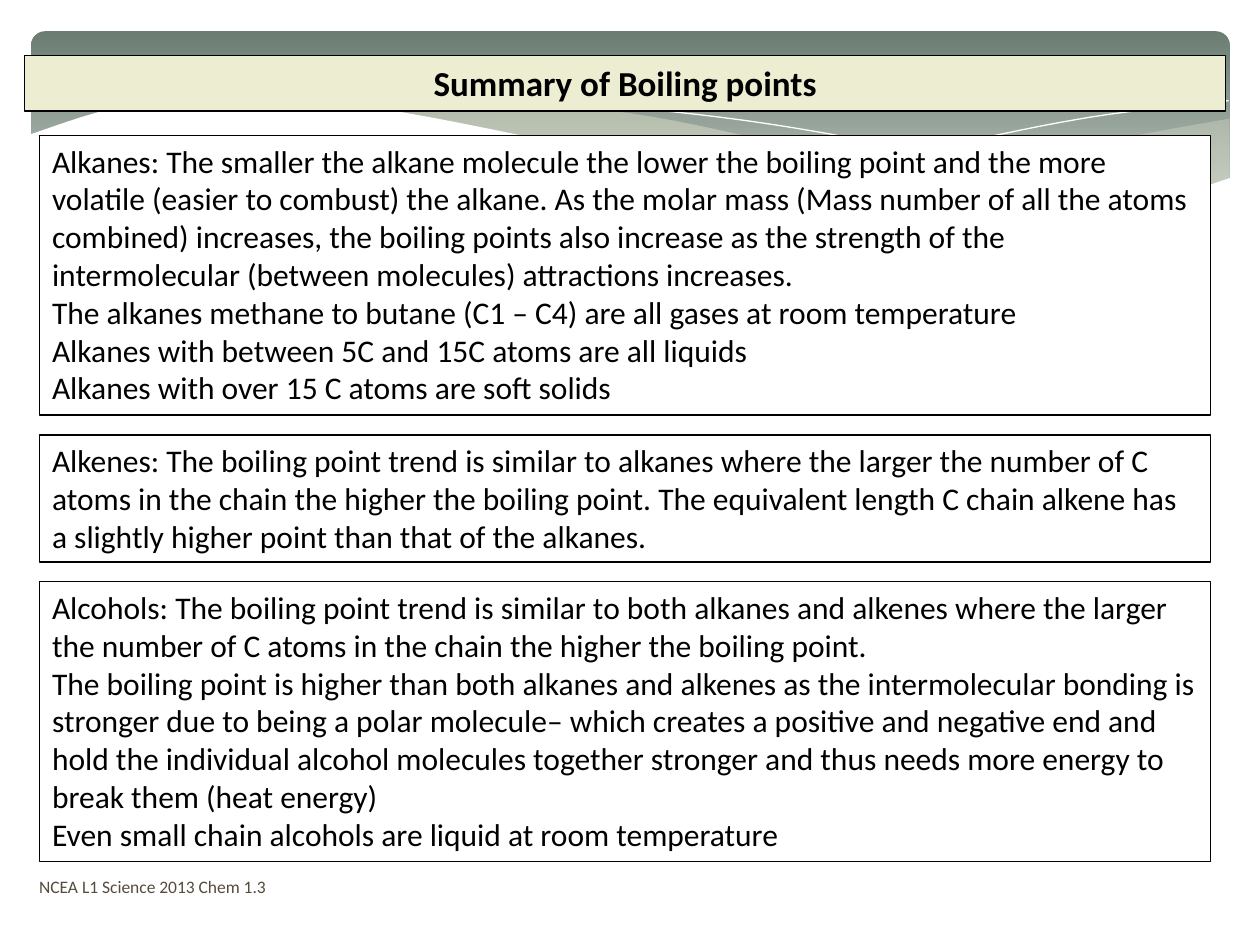
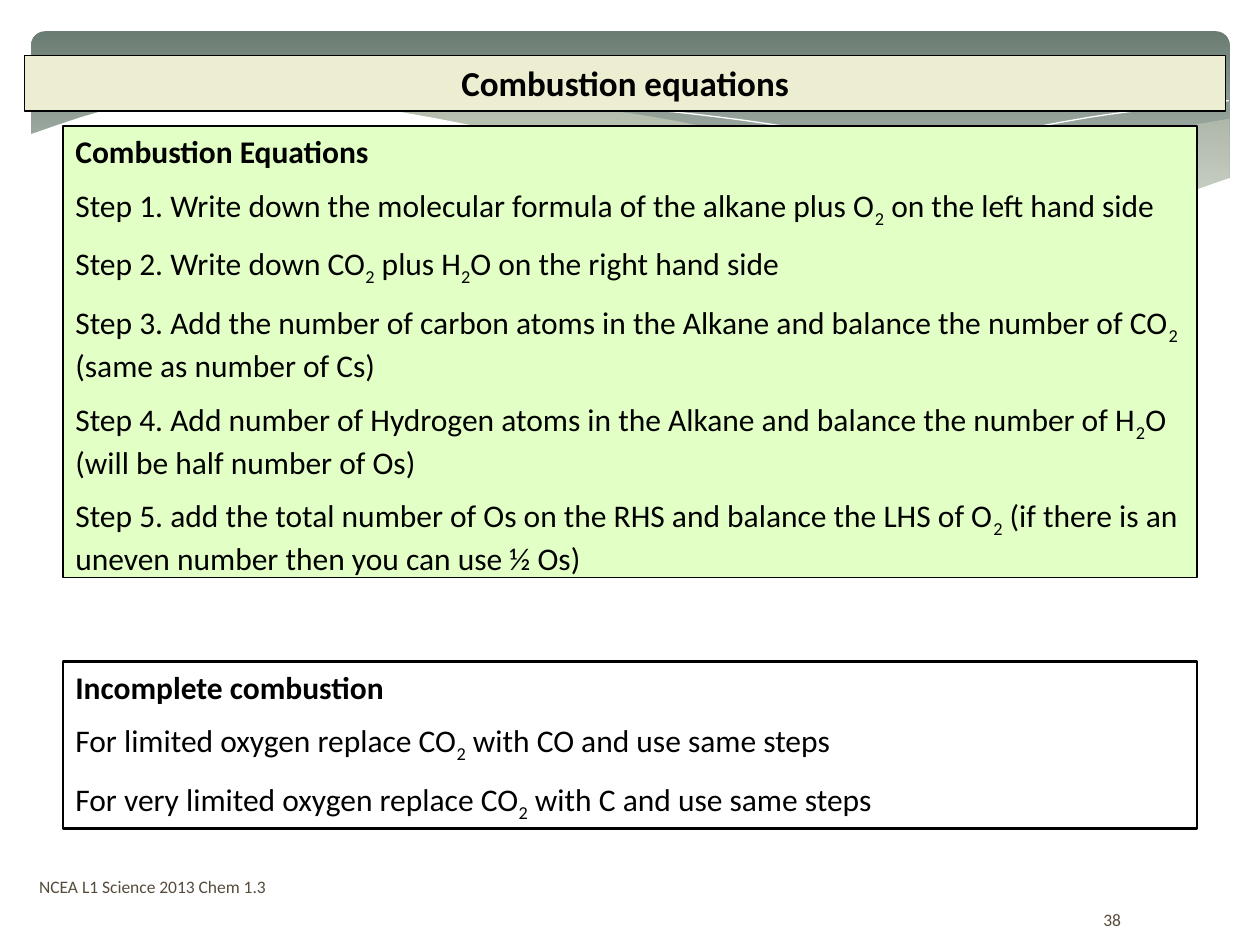
import dataclasses
import typing

import lxml.etree
import pptx
import pptx.dml.color
import pptx.enum.shapes
import pptx.enum.text
import pptx.oxml.ns
import pptx.util

Cm = pptx.util.Cm
Pt = pptx.util.Pt
RGB = pptx.dml.color.RGBColor.from_string
SHAPES = pptx.enum.shapes.MSO_SHAPE
ALIGN = pptx.enum.text.PP_ALIGN
ANCHOR = pptx.enum.text.MSO_ANCHOR
AUTO_SIZE = pptx.enum.text.MSO_AUTO_SIZE


@dataclasses.dataclass(frozen=True)
class Theme:
    font: str = "Calibri"
    ink: str = "000000"
    paper: str = "FFFFFF"
    cream: str = "ECEDD1"
    steps_green: str = "E2FFC5"
    footer_brown: str = "564B3C"
    band_dark: str = "6B7D72"
    band_light: str = "BEC7C2"
    title_size: int = 20
    body_size: int = 18
    footer_size: int = 10
    paragraph_gap: int = 9
    thin: float = 0.75
    thick: float = 1.5


class Box(typing.NamedTuple):
    left: float
    top: float
    width: float
    height: float

    def lengths(self):
        return [Cm(value) for value in self]


THEME = Theme()

SLIDE_WIDTH, SLIDE_HEIGHT = 25.4, 19.05
BAND = Box(0.63, 0.63, 24.16, 3.96)
TITLE_BAR = Box(0.5, 1.12, 24.21, 1.12)
FOOTER_AREA = Box(0.54, 17.37, 10.52, 1.02)
PAGE_NUMBER_AREA = Box(19.46, 18.03, 5.92, 1.02)
FAMILY_LEFT, FAMILY_TOP, FAMILY_WIDTH = 0.8, 2.73, 23.6
FAMILY_GAP = 0.4
BODY_LINE_HEIGHT = 0.77
PANEL_PADDING = 0.25
STEPS_MARGIN = 1.27

FOOTER = "NCEA L1 Science 2013 Chem 1.3"

ALKANES = [
    "Alkanes: The smaller the alkane molecule the lower the boiling point and the more "
    "volatile (easier to combust) the alkane. As the molar mass (Mass number of all the atoms "
    "combined) increases, the boiling points also increase as the strength of the "
    "intermolecular (between molecules) attractions increases.",
    "The alkanes methane to butane (C1 – C4) are all gases at room temperature",
    "Alkanes with between 5C and 15C atoms are all liquids",
    "Alkanes with over 15 C atoms are soft solids",
]
ALKENES = [
    "Alkenes: The boiling point trend is similar to alkanes where the larger the number of C "
    "atoms in the chain the higher the boiling point. The equivalent length C chain alkene has "
    "a slightly higher point than that of the alkanes.",
]
ALCOHOLS = [
    "Alcohols: The boiling point trend is similar to both alkanes and alkenes where the larger "
    "the number of C atoms in the chain the higher the boiling point.",
    "The boiling point is higher than both alkanes and alkenes as the intermolecular bonding is "
    "stronger due to being a polar molecule– which creates a positive and negative end and "
    "hold the individual alcohol molecules together stronger and thus needs more energy to "
    "break them (heat energy)",
    "Even small chain alcohols are liquid at room temperature",
]
COMBUSTION_STEPS = [
    "Step 1. Write down the molecular formula of the alkane plus O_2 on the left hand side",
    "Step 2. Write down CO_2 plus H_2O on the right hand side",
    "Step 3. Add the number of carbon atoms in the Alkane and balance the number of CO_2 "
    "(same as number of Cs)",
    "Step 4. Add number of Hydrogen atoms in the Alkane and balance the number of H_2O "
    "(will be half number of Os)",
    "Step 5. add the total number of Os on the RHS and balance the LHS of O_2 "
    "(if there is an uneven number then you can use ½ Os)",
]
INCOMPLETE_STEPS = [
    "For limited oxygen replace CO_2 with CO and use same steps",
    "For very limited oxygen replace CO_2 with C and use same steps",
]


def smooth(*knots, steps=8):
    padded = [knots[0], *knots, knots[-1]]
    curve = [knots[0]]
    for before, start, end, after in zip(padded, padded[1:], padded[2:], padded[3:]):
        for step in range(1, steps + 1):
            t = step / steps
            curve.append(tuple(
                b + (c - a) * t / 2
                + (2 * a - 5 * b + 4 * c - d) * t ** 2 / 2
                + (3 * b - a - 3 * c + d) * t ** 3 / 2
                for a, b, c, d in zip(before, start, end, after)))
    return curve


def add_run(paragraph, text, size, color, bold=False, subscript=False):
    run = paragraph.add_run()
    run.text = text
    run.font.name = THEME.font
    run.font.size = Pt(size)
    run.font.bold = bold
    run.font.color.rgb = RGB(color)
    if subscript:
        run._r.get_or_add_rPr().set("baseline", "-25000")


def add_formula_text(paragraph, text, size, bold=False):
    plain, *marked = text.split("_")
    add_run(paragraph, plain, size, THEME.ink, bold)
    for part in marked:
        add_run(paragraph, part[0], size, THEME.ink, bold, subscript=True)
        if part[1:]:
            add_run(paragraph, part[1:], size, THEME.ink, bold)


def add_panel(slide, box, paragraphs, fill, heading=None, size=THEME.body_size,
              align=ALIGN.LEFT, gap=0, border=THEME.thin):
    panel = slide.shapes.add_shape(SHAPES.RECTANGLE, *box.lengths())
    panel.shadow.inherit = False
    panel.fill.solid()
    panel.fill.fore_color.rgb = RGB(fill)
    panel.line.color.rgb = RGB(THEME.ink)
    panel.line.width = Pt(border)
    frame = panel.text_frame
    frame.word_wrap = True
    frame.auto_size = AUTO_SIZE.SHAPE_TO_FIT_TEXT
    frame.vertical_anchor = ANCHOR.TOP
    lines = [(heading, True)] if heading else []
    lines += [(text, False) for text in paragraphs]
    for index, (text, bold) in enumerate(lines):
        paragraph = frame.add_paragraph() if index else frame.paragraphs[0]
        paragraph.alignment = align
        if index and gap:
            paragraph.space_before = Pt(gap)
        add_formula_text(paragraph, text, size, bold)


def add_small_print(slide, box, text, align=ALIGN.LEFT):
    frame = slide.shapes.add_textbox(*box.lengths()).text_frame
    frame.word_wrap = True
    frame.vertical_anchor = ANCHOR.MIDDLE
    frame.paragraphs[0].alignment = align
    add_run(frame.paragraphs[0], text, THEME.footer_size, THEME.footer_brown)


def draw_outline(slide, points, closed):
    start, *rest = [(Cm(x), Cm(y)) for x, y in points]
    builder = slide.shapes.build_freeform(*start, scale=1.0)
    builder.add_line_segments(rest, close=closed)
    outline = builder.convert_to_shape()
    outline.shadow.inherit = False
    return outline


def add_wave(slide, points, color, opacity=100):
    wave = draw_outline(slide, points, closed=True)
    wave.line.fill.background()
    wave.fill.solid()
    wave.fill.fore_color.rgb = RGB(color)
    if opacity < 100:
        tint = wave._element.spPr.find(".//" + pptx.oxml.ns.qn("a:srgbClr"))
        alpha = lxml.etree.SubElement(tint, pptx.oxml.ns.qn("a:alpha"))
        alpha.set("val", str(opacity * 1000))


def add_hairline(slide, points):
    hairline = draw_outline(slide, points, closed=False)
    hairline.fill.background()
    hairline.line.color.rgb = RGB(THEME.paper)
    hairline.line.width = Pt(0)


def add_gradient_band(slide):
    band = slide.shapes.add_shape(SHAPES.ROUNDED_RECTANGLE, *BAND.lengths())
    band.adjustments[0] = 0.07
    band.shadow.inherit = False
    band.line.fill.background()
    band.fill.gradient()
    band.fill.gradient_angle = 270
    stops = zip(band.fill.gradient_stops, (THEME.band_dark, THEME.band_light), (0, 0.9))
    for stop, color, position in stops:
        stop.color.rgb = RGB(color)
        stop.position = position


def add_waves(slide):
    right_crest = smooth((24.79, 2.39), (22.63, 2.79), (20.45, 3.33), (16.79, 4.06))
    right_trough = smooth((16.79, 4.06), (18.92, 4.29), (20.68, 4.37), (22.78, 4.2),
                          (24.79, 3.58))
    add_wave(slide, right_crest + right_trough, THEME.cream, 29)

    middle_crest = smooth((22.68, 4.24), (19.69, 3.78), (15.98, 2.95), (12.75, 2.29),
                          (9.65, 2.03), (7.26, 2.18))
    middle_trough = smooth((7.26, 2.18), (11.4, 2.95), (14.83, 3.71), (18.34, 4.27),
                           (20.62, 4.39), (22.68, 4.24))
    add_wave(slide, middle_crest + middle_trough, THEME.cream, 40)

    add_hairline(slide, smooth((7.85, 2.29), (9.5, 2.09), (11.91, 2.11), (15.44, 2.49),
                               (19, 3.17), (23.04, 4.22)))
    add_hairline(slide, smooth((15.57, 3.84), (19, 2.97), (22, 2.36), (24.77, 2.03)))

    page_left, page_right, page_bottom = 0.58, 24.82, 5.69
    page_edge = smooth((page_right, 3.58), (22.83, 4.17), (20.14, 4.34), (16.46, 3.96),
                       (11.35, 2.9), (7.42, 2.16), (4.5, 1.98), (2.41, 2.16),
                       (page_left, 2.72))
    page_corners = [(page_left, page_bottom), (page_right, page_bottom)]
    add_wave(slide, page_edge + page_corners, THEME.paper)


def start_slide(deck, title):
    slide = deck.slides.add_slide(deck.slide_layouts[6])
    add_gradient_band(slide)
    add_waves(slide)
    add_small_print(slide, FOOTER_AREA, FOOTER)
    add_panel(slide, TITLE_BAR, [], THEME.cream, heading=title,
              size=THEME.title_size, align=ALIGN.CENTER)
    return slide


def build_boiling_points(deck):
    slide = start_slide(deck, "Summary of Boiling points")
    top = FAMILY_TOP
    for facts, line_count in [(ALKANES, 7), (ALKENES, 3), (ALCOHOLS, 7)]:
        height = line_count * BODY_LINE_HEIGHT + PANEL_PADDING
        add_panel(slide, Box(FAMILY_LEFT, top, FAMILY_WIDTH, height), facts, THEME.paper)
        top += height + FAMILY_GAP


def build_combustion(deck):
    slide = start_slide(deck, "Combustion equations")
    add_small_print(slide, PAGE_NUMBER_AREA, "38", ALIGN.CENTER)
    width = SLIDE_WIDTH - 2 * STEPS_MARGIN
    add_panel(slide, Box(STEPS_MARGIN, 2.54, width, 9.1), COMBUSTION_STEPS,
              THEME.steps_green, heading="Combustion Equations", gap=THEME.paragraph_gap)
    add_panel(slide, Box(STEPS_MARGIN, 13.34, width, 3.36), INCOMPLETE_STEPS,
              THEME.paper, heading="Incomplete combustion", gap=THEME.paragraph_gap,
              border=THEME.thick)


def main():
    deck = pptx.Presentation()
    deck.slide_width, deck.slide_height = Cm(SLIDE_WIDTH), Cm(SLIDE_HEIGHT)
    build_boiling_points(deck)
    build_combustion(deck)
    deck.save("out.pptx")


if __name__ == "__main__":
    main()
